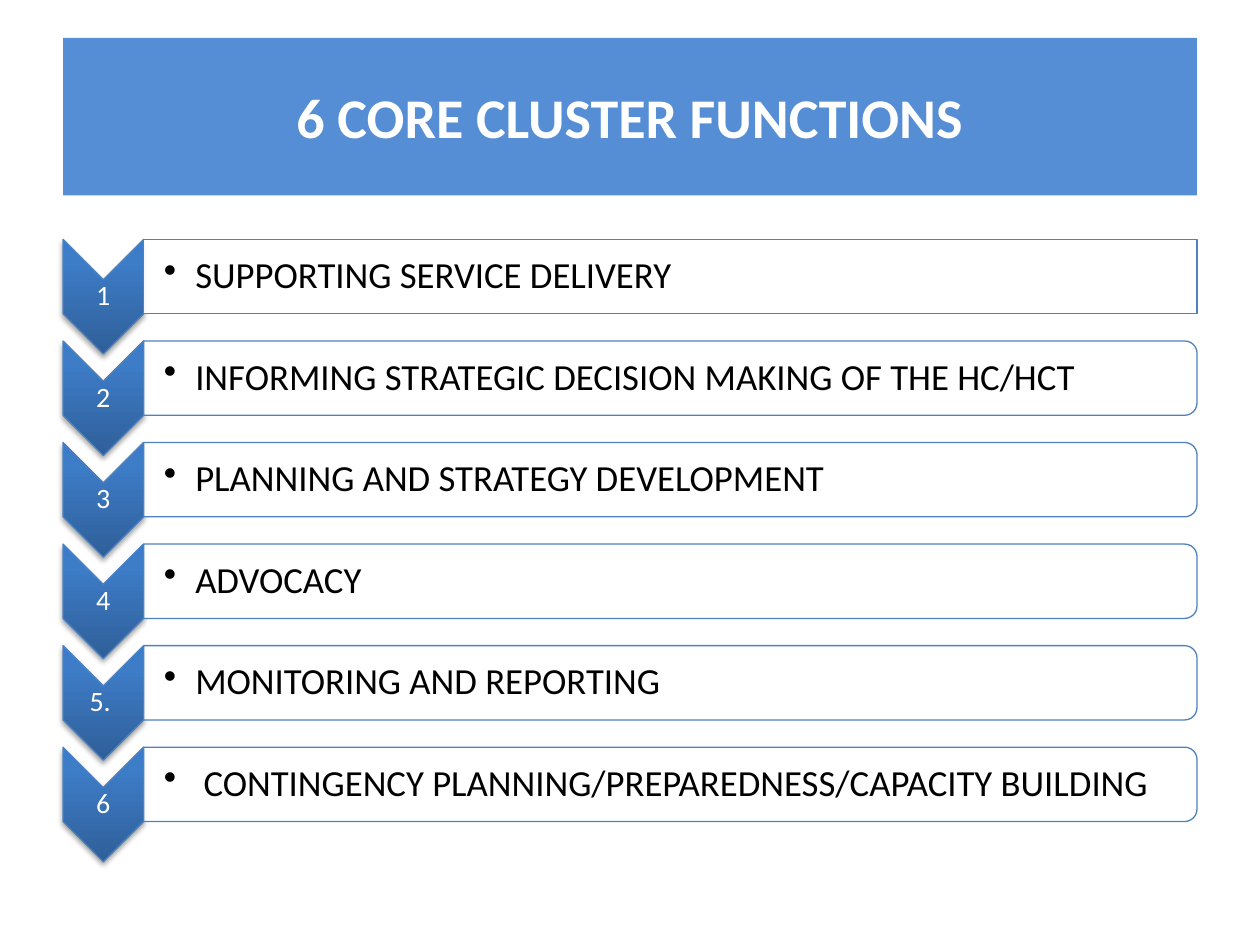
import pptx
import pptx.util
import pptx.oxml
import pptx.oxml.ns
import pptx.dml.color
import pptx.enum.shapes
import pptx.enum.text
from dataclasses import dataclass

Inches = pptx.util.Inches
Pt = pptx.util.Pt
Kind = pptx.enum.shapes.MSO_SHAPE
Align = pptx.enum.text.PP_ALIGN
MIDDLE = pptx.enum.text.MSO_ANCHOR.MIDDLE
NS = pptx.oxml.ns.nsdecls("a")


@dataclass(frozen=True)
class Theme:
    font: str = "Calibri"
    band: str = "558ED5"
    edge: str = "4F81BD"
    white: str = "FFFFFF"
    black: str = "000000"
    fade: tuple = ((0, "2F5F99"), (80, "3D7CC7"), (100, "3A7CCB"))
    head: int = 32
    body: int = 21
    mark: int = 16


THEME = Theme()

ROWS = [
    ("1", "SUPPORTING SERVICE DELIVERY"),
    ("2", "INFORMING STRATEGIC DECISION MAKING OF THE HC/HCT"),
    ("3", "PLANNING AND STRATEGY DEVELOPMENT"),
    ("4", "ADVOCACY"),
    ("5. ", "MONITORING AND REPORTING"),
    ("6", " CONTINGENCY PLANNING/PREPAREDNESS/CAPACITY BUILDING"),
]

# Row grid, in inches
LEFT, TOP, STEP = 0.5, 1.9, 4.03 / 5
ARROW_W, ARROW_H = 0.64, 0.91
BAR_W, BAR_H = 8.36, 0.59


def style(item, **values):
    for name, value in values.items():
        setattr(item, name, value)


def color(code):
    return pptx.dml.color.RGBColor.from_string(code)


def node(xml):
    return pptx.oxml.parse_xml(xml)


def write(frame, text, size, ink, align, bold=False):
    """Put one styled line into a text frame."""
    style(frame, word_wrap=True, vertical_anchor=MIDDLE)
    para = frame.paragraphs[0]
    para.alignment = align
    run = para.add_run()
    run.text = text
    style(run.font, name=THEME.font, size=Pt(size), bold=bold)
    run.font.color.rgb = color(ink)
    return para


def add_title(slide, text):
    title = slide.shapes.title
    style(title, left=Inches(0.5), top=Inches(0.3),
          width=Inches(9), height=Inches(1.25))
    title.fill.solid()
    title.fill.fore_color.rgb = color(THEME.band)
    write(title.text_frame, text, THEME.head, THEME.white, Align.CENTER, True)


def add_turned(slide, kind, left, top, width, height):
    """Add a shape turned by 90 degrees that covers the given area."""
    shape = slide.shapes.add_shape(
        kind, Inches(left + (width - height) / 2),
        Inches(top + (height - width) / 2), Inches(height), Inches(width))
    shape.rotation = 90
    shape.shadow.inherit = False
    shape.line.color.rgb = color(THEME.edge)
    shape.line.width = Pt(0.75)
    return shape


def add_label(slide, left, top, width, height, inset, *words):
    box = slide.shapes.add_textbox(*map(Inches, (left, top, width, height)))
    frame = box.text_frame
    edge = Inches(0.01)
    style(frame, margin_left=Inches(inset), margin_right=edge,
          margin_top=edge, margin_bottom=edge)
    para = write(frame, *words)
    para.line_spacing = 0.9
    return para


def add_arrow(slide, top, text):
    arrow = add_turned(slide, Kind.CHEVRON, LEFT, top, ARROW_W, ARROW_H)
    props = arrow.element.spPr
    # Gradient goes right after the geometry
    stops = "".join(
        f'<a:gs pos="{pos * 1000}"><a:srgbClr val="{code}"/></a:gs>'
        for pos, code in THEME.fade)
    props.insert(2, node(
        f'<a:gradFill {NS} rotWithShape="0"><a:gsLst>{stops}</a:gsLst>'
        '<a:lin ang="16200000" scaled="0"/></a:gradFill>'))
    # Soft shadow below
    props.find(pptx.oxml.ns.qn("a:effectLst")).append(node(
        f'<a:outerShdw {NS} blurRad="{Pt(3.1)}" dist="{Pt(1.8)}" '
        f'dir="5400000" rotWithShape="0"><a:srgbClr val="{THEME.black}">'
        '<a:alpha val="35000"/></a:srgbClr></a:outerShdw>'))
    add_label(slide, LEFT, top + ARROW_W / 2, ARROW_W, ARROW_H - ARROW_W,
              0.01, text, THEME.mark, THEME.white, Align.CENTER)


def add_bar(slide, kind, top, text):
    left = LEFT + ARROW_W
    bar = add_turned(slide, kind, left, top, BAR_W, BAR_H)
    bar.fill.solid()
    bar.fill.fore_color.rgb = color(THEME.white)
    tint = bar.element.spPr.find(".//" + pptx.oxml.ns.qn("a:srgbClr"))
    tint.append(node(f'<a:alpha {NS} val="90000"/>'))
    # Bulleted text
    para = add_label(slide, left, top, BAR_W, BAR_H, 0.16,
                     text, THEME.body, THEME.black, Align.LEFT)
    para.level = 1
    props = para._p.get_or_add_pPr()
    props.set("marL", str(Inches(0.25)))
    props.set("indent", str(-Inches(0.25)))
    props.append(node(f'<a:buChar {NS} char="•"/>'))


def main():
    deck = pptx.Presentation()
    style(deck, slide_width=Inches(10), slide_height=Inches(7.5))
    slide = deck.slides.add_slide(deck.slide_layouts[5])
    add_title(slide, "6 CORE CLUSTER FUNCTIONS")
    # Numbered rows; the first bar has square corners
    for i, (mark, text) in enumerate(ROWS):
        top = TOP + i * STEP
        kind = Kind.ROUND_2_SAME_RECTANGLE if i else Kind.RECTANGLE
        add_arrow(slide, top, mark)
        add_bar(slide, kind, top, text)
    deck.save("out.pptx")


if __name__ == "__main__":
    main()
